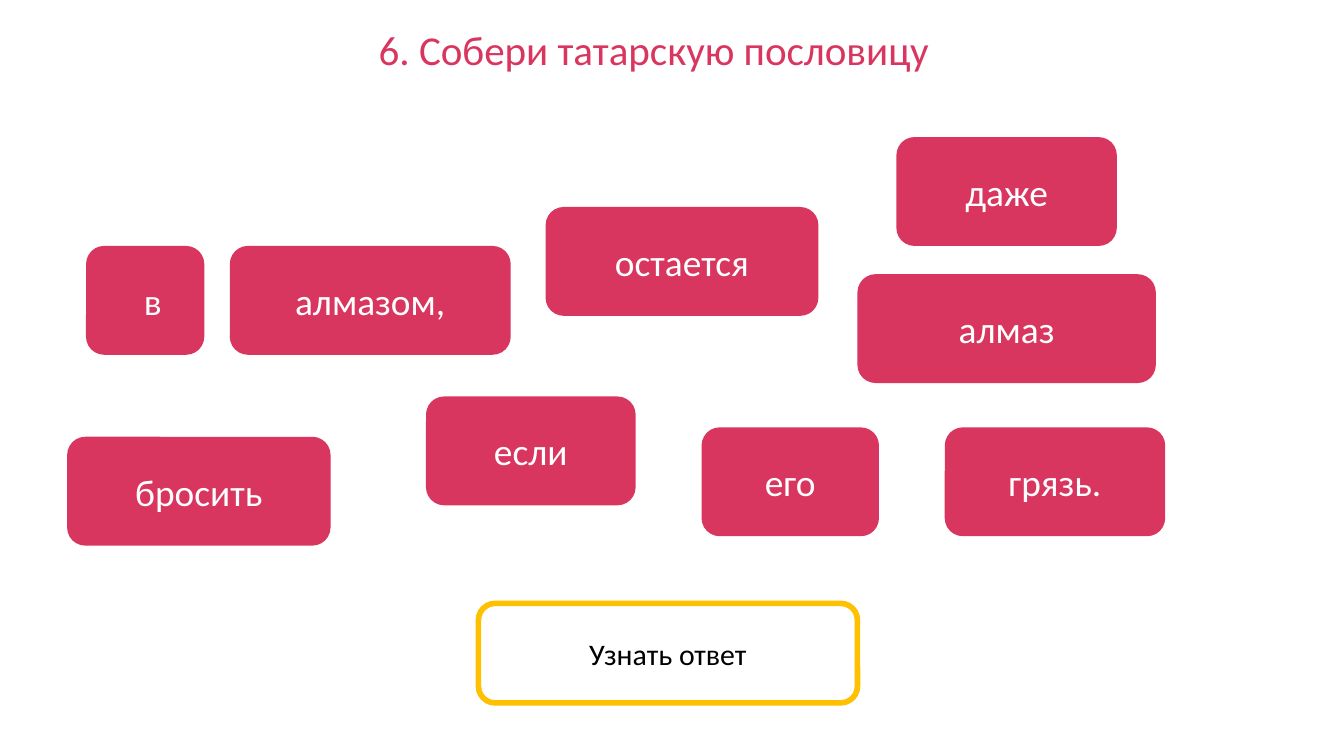
from pptx import Presentation
from pptx.dml.color import RGBColor
from pptx.enum.shapes import MSO_SHAPE
from pptx.enum.text import MSO_ANCHOR, MSO_AUTO_SIZE, PP_ALIGN
from pptx.util import Inches, Pt

CRIMSON, GOLD, WHITE, BLACK = "D9365F", "FFC000", "FFFFFF", "000000"
SLIDE_WIDTH = 10
TITLE = "6. Собери татарскую пословицу"
ANSWER = "Узнать ответ"
CARD_HEIGHT = 0.81
CARDS = [  # word, left, top, width
    ("остается", 4.06, 1.54, 2.03),
    ("алмаз", 6.38, 2.04, 2.22),
    ("если", 3.17, 2.95, 1.56),
    ("даже", 6.67, 1.02, 1.64),
    ("алмазом,", 1.71, 1.83, 2.09),
    ("бросить", 0.5, 3.25, 1.96),
    ("его", 5.22, 3.18, 1.32),
    ("в", 0.64, 1.83, 0.88),
    ("грязь.", 7.03, 3.18, 1.64),
]


def rgb(value):
    return RGBColor.from_string(value)


def write(sp, text, size, color):
    tf = sp.text_frame
    tf.word_wrap = True
    tf.auto_size = MSO_AUTO_SIZE.SHAPE_TO_FIT_TEXT
    p = tf.paragraphs[0]
    p.alignment = PP_ALIGN.CENTER
    r = p.add_run()
    r.text = text
    r.font.name = "Calibri"
    r.font.size = Pt(size)
    r.font.color.rgb = rgb(color)


def add_button(slide, text, box, size=20, color=WHITE, fill=None, line=None):
    sp = slide.shapes.add_shape(MSO_SHAPE.ROUNDED_RECTANGLE, *map(Inches, box))
    sp.shadow.inherit = False
    if fill:
        sp.fill.solid()
        sp.fill.fore_color.rgb = rgb(fill)
    else:
        sp.fill.background()
    if line:
        sp.line.color.rgb = rgb(line)
        sp.line.width = Pt(3)
    else:
        sp.line.fill.background()
    tf = sp.text_frame
    tf.vertical_anchor = MSO_ANCHOR.MIDDLE
    tf.margin_left = tf.margin_right = Inches(0.39)
    tf.margin_top = tf.margin_bottom = Inches(0.2)
    write(sp, text, size, color)


prs = Presentation()
prs.slide_width = Inches(SLIDE_WIDTH)
prs.slide_height = Inches(SLIDE_WIDTH * 9 / 16)
slide = prs.slides.add_slide(prs.slide_layouts[6])

title = slide.shapes.add_textbox(*map(Inches, (1.88, 0.13, 5.97, 0.47)))
write(title, TITLE, 22, CRIMSON)

for word, left, top, width in CARDS:
    add_button(slide, word, (left, top, width, CARD_HEIGHT), fill=CRIMSON)

add_button(slide, ANSWER, (3.56, 4.49, 2.82, 0.74), size=16, color=BLACK, line=GOLD)

prs.save("out.pptx")
